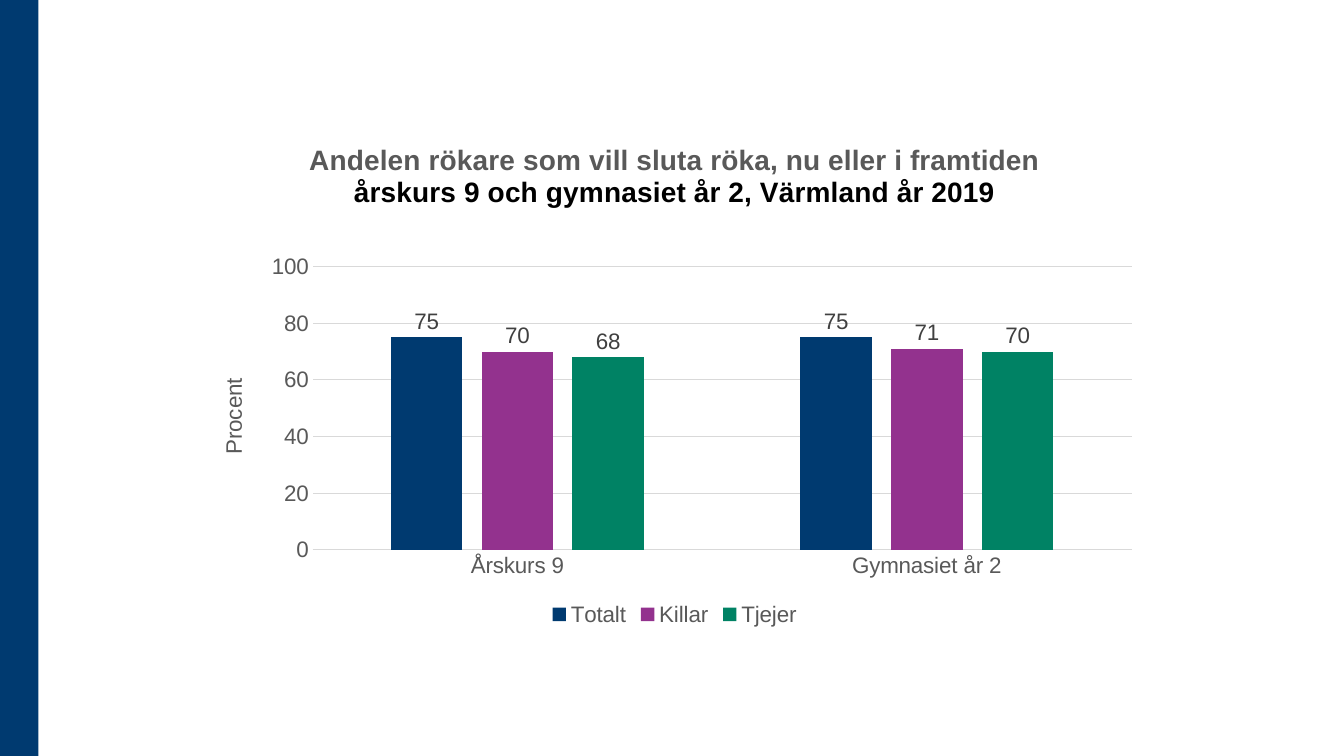
"""Build a slide with a clustered column chart of smokers who want to quit."""
from lxml.etree import SubElement
from pptx import Presentation
from pptx.chart.data import CategoryChartData
from pptx.dml.color import RGBColor
from pptx.enum.chart import XL_CHART_TYPE as ChartType
from pptx.enum.chart import XL_LABEL_POSITION as LabelPosition
from pptx.enum.chart import XL_LEGEND_POSITION as LegendPosition
from pptx.enum.chart import XL_TICK_MARK as TickMark
from pptx.enum.shapes import MSO_SHAPE as Shape
from pptx.oxml.ns import qn
from pptx.util import Cm, Pt

COLORS = {"navy": "003A70", "purple": "93328E", "green": "008264", "black": "000000",
          "text": "595959", "label": "404040", "grid": "D9D9D9"}
TITLE_LINES = [("Andelen rökare som vill sluta röka, nu eller i framtiden", "text"),
               ("årskurs 9 och gymnasiet år 2, Värmland år 2019", "black")]
CATEGORIES = ["Årskurs 9", "Gymnasiet år 2"]
SERIES = [("Totalt", (75, 75), "navy"), ("Killar", (70, 71), "purple"),
          ("Tjejer", (68, 70), "green")]
AXIS_TITLE = "Procent"
SLIDE_SIZE = (Cm(33.87), Cm(19.05))
BAR_WIDTH = Cm(0.97)
CHART_BOX = (Cm(5), Cm(3.15), Cm(24), Cm(12.75))
PLOT_LAYOUT = {"layoutTarget": "inner", "xMode": "edge", "yMode": "edge",
               "x": 0.12, "y": 0.28, "w": 0.86, "h": 0.56}
VALUE_SCALE = {"minimum_scale": 0, "maximum_scale": 100, "major_unit": 20}


def color(name):
    return RGBColor.from_string(COLORS[name])


def style_font(font, color_name, size=16, bold=False):
    for key, value in {"name": "Arial", "size": Pt(size), "bold": bold}.items():
        setattr(font, key, value)
    font.color.rgb = color(color_name)


def style_line(line):
    line.color.rgb = color("grid")
    line.width = Pt(0.75)


def add_side_bar(slide):
    bar = slide.shapes.add_shape(Shape.RECTANGLE, 0, 0, BAR_WIDTH, SLIDE_SIZE[1])
    bar.shadow.inherit = False
    bar.fill.solid()
    bar.fill.fore_color.rgb = color("navy")
    bar.line.fill.background()


def add_title(chart):
    frame = chart.chart_title.text_frame
    for index, (text, color_name) in enumerate(TITLE_LINES):
        paragraph = frame.add_paragraph() if index else frame.paragraphs[0]
        run = paragraph.add_run()
        run.text = text
        style_font(run.font, color_name, 20, True)
    chart.chart_title.include_in_layout = False


def style_axes(chart):
    for axis in (chart.category_axis, chart.value_axis):
        axis.major_tick_mark = axis.minor_tick_mark = TickMark.NONE
        style_font(axis.tick_labels.font, "text")
    style_line(chart.category_axis.format.line)
    value_axis = chart.value_axis
    for key, value in VALUE_SCALE.items():
        setattr(value_axis, key, value)
    value_axis.format.line.fill.background()
    style_line(value_axis.major_gridlines.format.line)
    run = value_axis.axis_title.text_frame.paragraphs[0].add_run()
    run.text = AXIS_TITLE
    style_font(run.font, "text")


def style_columns(chart):
    plot = chart.plots[0]
    for key, value in {"gap_width": 219, "overlap": -27, "vary_by_categories": False}.items():
        setattr(plot, key, value)
    for series, (_, _, color_name) in zip(plot.series, SERIES):
        series.format.fill.solid()
        series.format.fill.fore_color.rgb = color(color_name)
        labels = series.data_labels
        labels.show_value = True
        labels.position = LabelPosition.OUTSIDE_END
        style_font(labels.font, "label")


def place_plot(chart):
    plot_area = chart._chartSpace.find(".//" + qn("c:plotArea"))
    layout = plot_area.find(qn("c:layout"))
    if layout is None:
        layout = SubElement(plot_area, qn("c:layout"))
        plot_area.insert(0, layout)
    manual = SubElement(layout, qn("c:manualLayout"))
    for key, value in PLOT_LAYOUT.items():
        SubElement(manual, qn("c:" + key)).set("val", str(value))


def add_chart(slide):
    data = CategoryChartData()
    data.categories = CATEGORIES
    for name, values, _ in SERIES:
        data.add_series(name, values)
    chart = slide.shapes.add_chart(ChartType.COLUMN_CLUSTERED, *CHART_BOX, data).chart
    style_font(chart.font, "black")
    add_title(chart)
    style_axes(chart)
    style_columns(chart)
    place_plot(chart)
    chart.has_legend = True
    chart.legend.position = LegendPosition.BOTTOM
    chart.legend.include_in_layout = False
    style_font(chart.legend.font, "text")


def main():
    presentation = Presentation()
    presentation.slide_width, presentation.slide_height = SLIDE_SIZE
    slide = presentation.slides.add_slide(presentation.slide_layouts[6])
    add_side_bar(slide)
    add_chart(slide)
    presentation.save("out.pptx")


if __name__ == "__main__":
    main()
